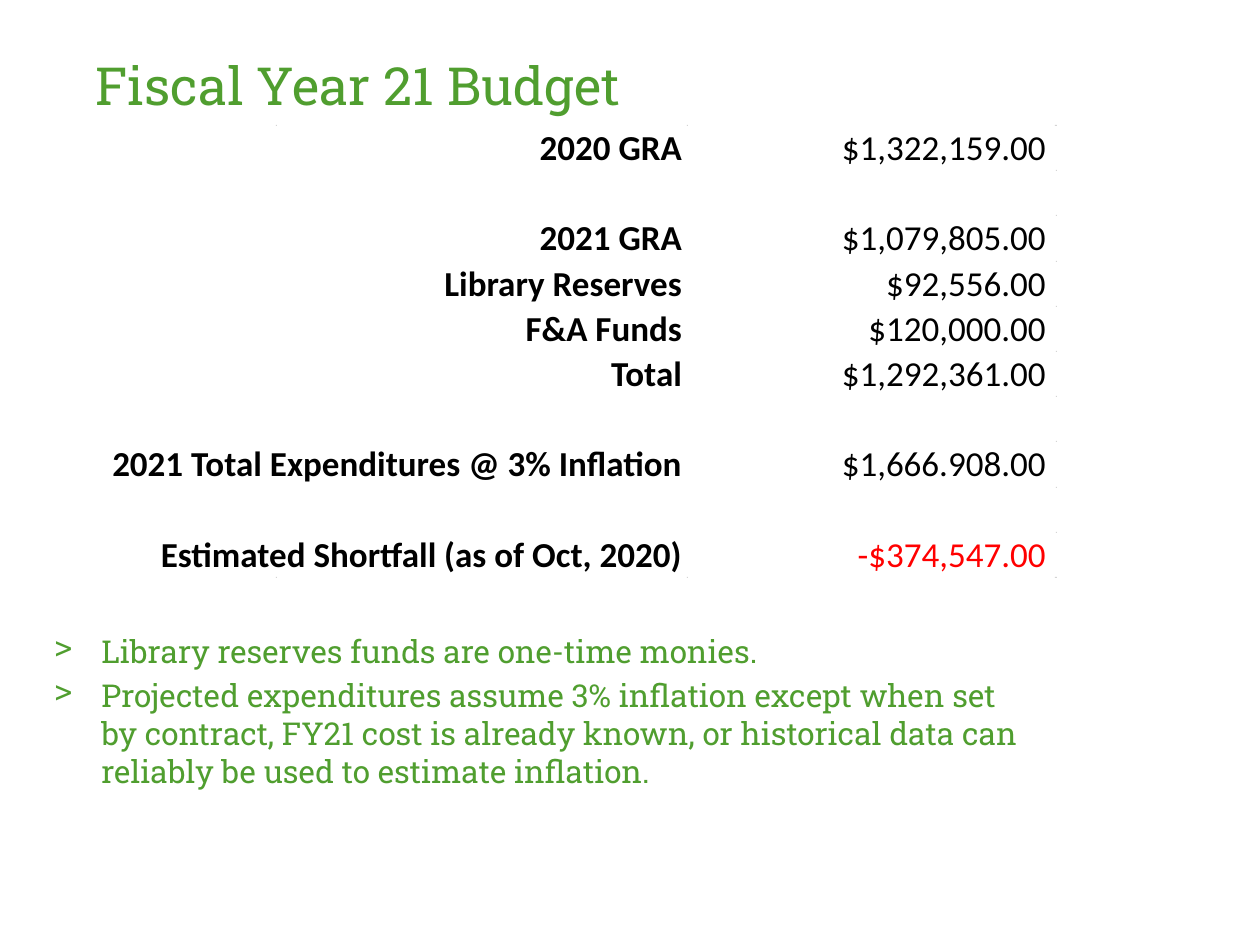
from lxml.etree import SubElement
from pptx import Presentation
from pptx.dml.color import RGBColor
from pptx.enum.shapes import MSO_SHAPE
from pptx.enum.text import MSO_ANCHOR, PP_ALIGN
from pptx.oxml.ns import qn
from pptx.util import Pt

PX = 914400 // 126
GREEN = RGBColor(0x50, 0x9E, 0x2F)
BLACK = RGBColor(0, 0, 0)
RED = RGBColor(0xFF, 0, 0)
GREY = RGBColor(0xD4, 0xD4, 0xD4)

TITLE = {"name": "Roboto Slab", "size": Pt(30), "color": GREEN}
NOTE = {"name": "Roboto Slab", "size": Pt(18), "color": GREEN}
LABEL = {"name": "Calibri", "size": Pt(20), "bold": True, "color": BLACK}
AMOUNT = {"name": "Calibri", "size": Pt(20), "bold": False, "color": BLACK}
SHORTFALL = {**AMOUNT, "color": RED}

BUDGET = [
    ("2020 GRA", "$1,322,159.00"),
    ("", ""),
    ("2021 GRA", "$1,079,805.00"),
    ("Library Reserves", "$92,556.00"),
    ("F&A Funds", "$120,000.00"),
    ("Total", "$1,292,361.00"),
    ("", ""),
    ("2021 Total Expenditures @ 3% Inflation", "$1,666.908.00"),
    ("", ""),
    ("Estimated Shortfall (as of Oct, 2020)", "-$374,547.00"),
]
NOTES = [
    "Library reserves funds are one-time monies.",
    "Projected expenditures assume 3% inflation except when set by contract, "
    "FY21 cost is already known, or historical data can reliably be used to "
    "estimate inflation.",
]


def px(*lengths):
    return [length * PX for length in lengths]


def format_font(font, values):
    for name, value in values.items():
        if name == "color":
            font.color.rgb = value
        else:
            setattr(font, name, value)


def add_frame(slide, box):
    frame = slide.shapes.add_textbox(*px(*box)).text_frame
    frame.word_wrap = True
    return frame


def add_title(slide, box, text):
    title = add_frame(slide, box).paragraphs[0]
    title.text = text
    title.line_spacing = 0.8
    format_font(title.runs[0].font, TITLE)


def add_notes(slide, box, notes):
    frame = add_frame(slide, box)
    for i, text in enumerate(notes):
        note = frame.add_paragraph() if i else frame.paragraphs[0]
        note.text = text
        if i:
            note.space_before = Pt(3.6)
        properties = note._p.get_or_add_pPr()
        properties.set("marL", str(47 * PX))
        properties.set("indent", str(-47 * PX))
        SubElement(properties, qn("a:buChar")).set("char", ">")
        format_font(note.runs[0].font, NOTE)


def fill_cell(cell, text, values, right_margin):
    cell.fill.background()
    cell.vertical_anchor = MSO_ANCHOR.TOP
    cell.margin_left, cell.margin_top, cell.margin_right, cell.margin_bottom = px(
        0, 2, right_margin, 0)
    entry = cell.text_frame.paragraphs[0]
    entry.alignment = PP_ALIGN.RIGHT
    entry.text = text
    for run in entry.runs:
        format_font(run.font, values)


def add_budget(slide, box, label_width, rows):
    left, top, width, height = box
    edges = [round(i * height / len(rows)) for i in range(len(rows) + 1)]
    table = slide.shapes.add_table(len(rows), 2, *px(*box)).table
    table.first_row = table.horz_banding = False
    table.columns[0].width, table.columns[1].width = px(
        label_width, width - label_width)
    for i, (label, amount) in enumerate(rows):
        table.rows[i].height = (edges[i + 1] - edges[i]) * PX
        fill_cell(table.cell(i, 0), label, LABEL, 5)
        fill_cell(table.cell(i, 1), amount,
                  SHORTFALL if amount.startswith("-") else AMOUNT, 9)

    # Faint marks where the grid lines meet the table's outer edges
    corners = [(x, y) for y in (0, height) for x in (180, label_width, width)]
    for x, y in corners + [(width + 1, y) for y in edges]:
        mark = slide.shapes.add_shape(
            MSO_SHAPE.RECTANGLE, *px(left + x, top + y, 1, 1))
        mark.shadow.inherit = False
        mark.fill.solid()
        mark.fill.fore_color.rgb = GREY
        mark.line.fill.background()


def main():
    deck = Presentation()
    deck.slide_width, deck.slide_height = px(1260, 945)
    slide = deck.slides.add_slide(deck.slide_layouts[6])
    add_title(slide, (83, 59, 1128, 67), "Fiscal Year 21 Budget")
    add_notes(slide, (42, 626, 1008, 173), NOTES)
    add_budget(slide, (96, 125, 959, 452), 591, BUDGET)
    deck.save("out.pptx")


if __name__ == "__main__":
    main()
